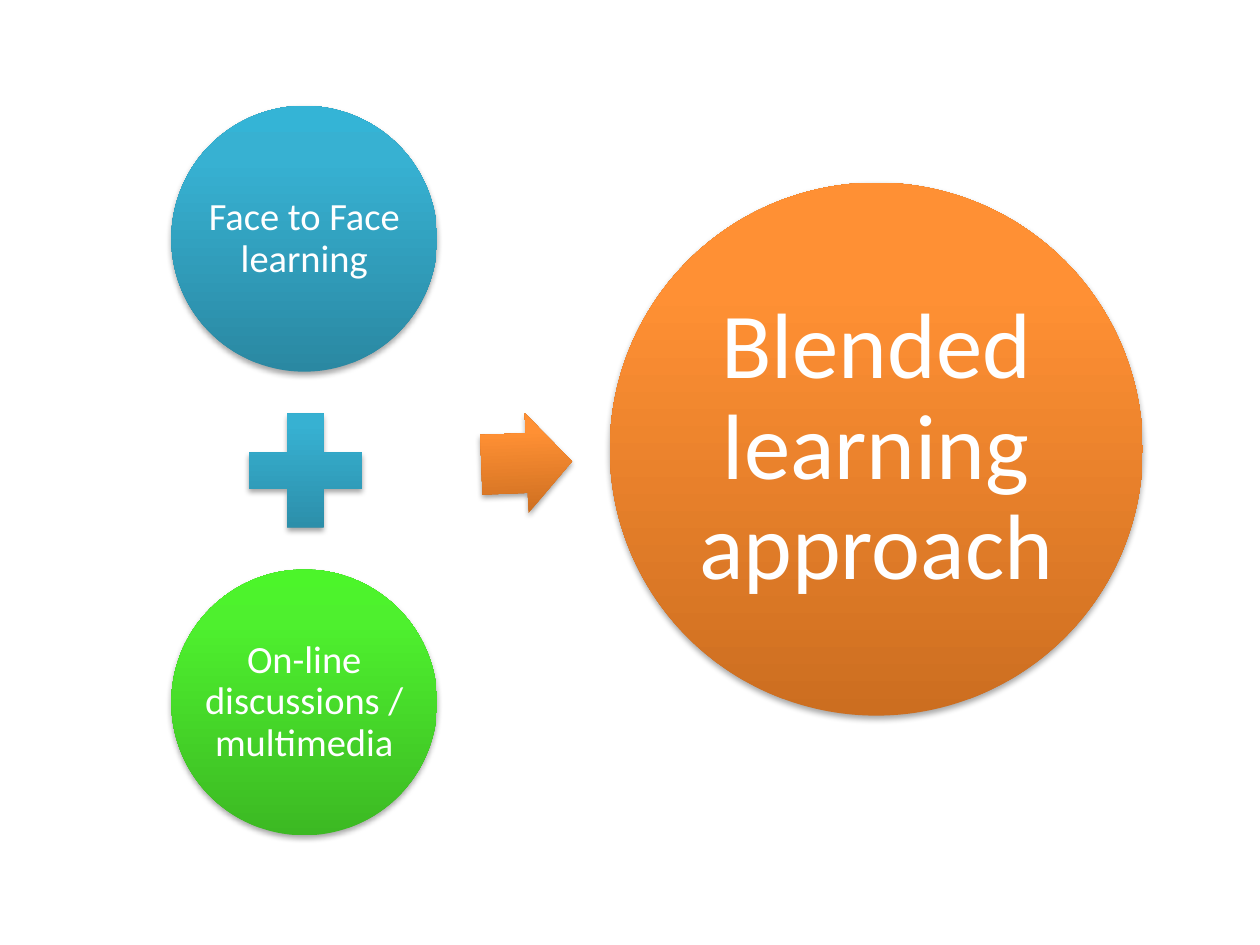
"""Build a slide showing two learning modes adding up to a blended approach."""
from lxml import etree
from pptx import Presentation
from pptx.dml.color import RGBColor
from pptx.enum.shapes import MSO_SHAPE
from pptx.enum.text import MSO_ANCHOR, PP_ALIGN
from pptx.util import Inches, Pt

OVAL, PLUS, ARROW = MSO_SHAPE.OVAL, MSO_SHAPE.MATH_PLUS, MSO_SHAPE.RIGHT_ARROW
MIDDLE, CENTER = MSO_ANCHOR.MIDDLE, PP_ALIGN.CENTER
NS = 'xmlns:a="http://schemas.openxmlformats.org/drawingml/2006/main"'
BLUE = ("2A88A2", "37B1D2", "34B4D6")
GREEN = ("3CB923", "4EF02E", "4CF52A")
ORANGE = ("CC6E20", "FF9034", "FF9136")
SHADOW = (
    f'<a:effectLst {NS}><a:outerShdw blurRad="40000" dist="23000" dir="5400000" rotWithShape="0">'
    '<a:srgbClr val="000000"><a:alpha val="35000"/></a:srgbClr></a:outerShdw></a:effectLst>'
)


def add_shape(kind, left, top, width, height, colors):
    sp = s.shapes.add_shape(kind, Inches(left), Inches(top), Inches(width), Inches(height))
    sp.line.fill.background()
    stops = "".join(
        f'<a:gs pos="{pos}"><a:srgbClr val="{color}"/></a:gs>'
        for pos, color in zip((0, 80000, 100000), colors)
    )
    fill = (
        f'<a:gradFill {NS} rotWithShape="1"><a:gsLst>{stops}</a:gsLst>'
        '<a:lin ang="16200000" scaled="0"/></a:gradFill>'
    )
    props = sp.element.spPr
    props.insert(2, etree.fromstring(fill))
    props.append(etree.fromstring(SHADOW))
    return sp


def add_text(text, left, top, width, height, size, inset, color="FFFFFF", font="Calibri"):
    box = s.shapes.add_textbox(Inches(left), Inches(top), Inches(width), Inches(height))
    tf = box.text_frame
    tf.word_wrap = True
    tf.vertical_anchor = MIDDLE
    tf.margin_left = tf.margin_right = tf.margin_top = tf.margin_bottom = Inches(inset)
    p = tf.paragraphs[0]
    p.alignment = CENTER
    p.line_spacing = 0.9
    r = p.add_run()
    r.text = text
    r.font.size = Pt(size)
    r.font.name = font
    r.font.color.rgb = RGBColor.from_string(color)


prs = Presentation()
prs.slide_width, prs.slide_height = Inches(10), Inches(7.5)
s = prs.slides.add_slide(prs.slide_layouts[6])

circles = [
    ("Face to Face learning", 1.36, 0.84, 2.11, 22, 0.03, BLUE),
    ("On-line discussions / multimedia", 1.36, 4.52, 2.11, 22, 0.03, GREEN),
    ("Blended learning approach", 4.84, 1.45, 4.23, 53, 0.07, ORANGE),
]
for text, left, top, side, size, inset, colors in circles:
    add_shape(OVAL, left, top, side, side, colors)
    add_text(text, left, top, side, side, size, inset)

add_shape(PLUS, 1.81, 3.12, 1.23, 1.23, BLUE)
arrow = add_shape(ARROW, 3.82, 3.28, 0.72, 0.79, ORANGE)
arrow.rotation = 357.8
arrow.adjustments[0] = 0.6
arrow.adjustments[1] = 0.5

prs.save("out.pptx")
